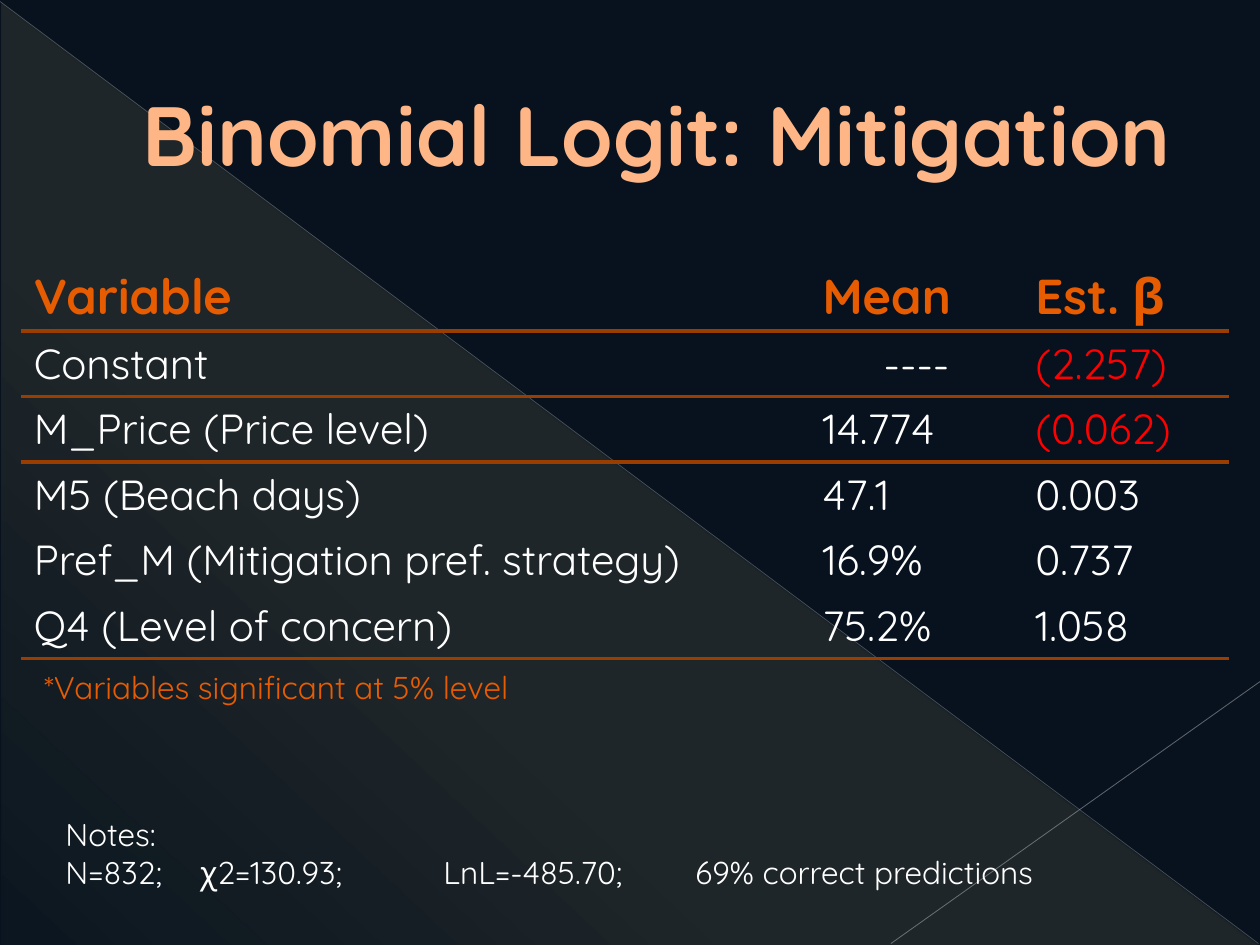
from dataclasses import dataclass
from typing import NamedTuple

from lxml import etree
from pptx import Presentation
from pptx import util as u
from pptx.dml.color import RGBColor
from pptx.enum import shapes, text
from pptx.oxml import parse_xml
from pptx.oxml.ns import nsdecls, qn


@dataclass(frozen=True)
class Theme:
    font: str = "Quicksand"
    back: str = "08121E"
    glow: str = "FFF39D"
    title: str = "FEB687"
    edge: str = "B05D26"
    head: str = "E75C01"
    rule: str = "9A3D01"
    body: str = "FFFFFF"
    neg: str = "FF0000"
    big: float = 48
    mid: float = 28
    cell: float = 24
    note: float = 18
    rule_w: float = 2.25


class Box(NamedTuple):
    x: float
    y: float
    w: float
    h: float

    def emu(self) -> list[int]:
        return [u.Cm(v) for v in self]


class Ray(NamedTuple):
    x1: float
    y1: float
    x2: float
    y2: float
    color: str
    width: float
    alpha: int


class Row(NamedTuple):
    name: str
    mean: str
    beta: str
    ruled: bool = False


T = Theme()
RAYS = [
    Ray(0, 0.03, 25.37, 19.02, "BABDC4", 0.39, 35),
    Ray(25.4, 13.74, 17.96, 19.02, "C1C4CA", 0.47, 45),
]
ROWS = [
    Row("Variable", "Mean", "Est. β", True),
    Row("Constant", "----", "(2.257)", True),
    Row("M_Price (Price level)", "14.774", "(0.062)"),
    Row("M5 (Beach days)", "47.1", "0.003"),
    Row("Pref_M (Mitigation pref. strategy)", "16.9%", "0.737"),
    Row("Q4 (Level of concern)", "75.2%", "1.058", True),
]
COLS = [15.9, 4.29, 4.15]
ROW_H = 1.32


def add_run(para, words: str, size: float, color: str, bold: bool = False):
    run = para.add_run()
    run.text = words
    font = run.font
    font.name, font.size, font.bold = T.font, u.Pt(size), bold
    font.color.rgb = RGBColor.from_string(color)
    return run


def add_box(slide, box: Box, lines: list[str], size: float, color: str,
            bold: bool = False, grow: bool = True):
    frame = slide.shapes.add_textbox(*box.emu()).text_frame
    frame.word_wrap = True
    if grow:
        frame.auto_size = text.MSO_AUTO_SIZE.SHAPE_TO_FIT_TEXT
    for i, line in enumerate(lines):
        para = frame.add_paragraph() if i else frame.paragraphs[0]
        add_run(para, line, size, color, bold)
    return frame


def add_glow(slide, box: Box) -> None:
    tri = slide.shapes.add_shape(shapes.MSO_SHAPE.RIGHT_TRIANGLE, *box.emu())
    tri.shadow.inherit = False
    tri.line.fill.background()
    stops = "".join(
        f'<a:gs pos="{pos * 1000}"><a:srgbClr val="{T.glow}">'
        f'<a:alpha val="{alpha * 1000}"/></a:srgbClr></a:gs>'
        for pos, alpha in [(0, 10), (70, 8), (100, 1)])
    grad = parse_xml(
        f'<a:gradFill {nsdecls("a")}><a:gsLst>{stops}</a:gsLst>'
        f'<a:lin ang="{133 * 60000}" scaled="0"/></a:gradFill>')
    tri._element.spPr.find(qn("a:prstGeom")).addnext(grad)


def add_ray(slide, ray: Ray) -> None:
    ends = [u.Cm(v) for v in ray[:4]]
    line = slide.shapes.add_connector(shapes.MSO_CONNECTOR.STRAIGHT, *ends)
    line.line.width = u.Pt(ray.width)
    line.line.color.rgb = RGBColor.from_string(ray.color)
    props = line._element.spPr
    tint = next(props.iter(qn("a:srgbClr")))
    etree.SubElement(tint, qn("a:alpha")).set("val", str(ray.alpha * 1000))
    etree.SubElement(props, qn("a:effectLst"))


def set_rule(cell, side: str) -> None:
    cell._tc.get_or_add_tcPr().insert(0, parse_xml(
        f'<a:{side} {nsdecls("a")} w="{u.Pt(T.rule_w)}"><a:solidFill>'
        f'<a:srgbClr val="{T.rule}"/></a:solidFill></a:{side}>'))


def add_grid(slide, x: float, y: float) -> None:
    box = Box(x, y, sum(COLS), ROW_H * len(ROWS))
    grid = slide.shapes.add_table(len(ROWS), len(COLS), *box.emu()).table
    grid.first_row = grid.horz_banding = False
    style = grid._tbl.tblPr.find(qn("a:tableStyleId"))
    style.text = "{2D5ABB26-0587-4C30-8999-92F81FD0307C}"
    for col, width in zip(grid.columns, COLS):
        col.width = u.Cm(width)
    for r, row in enumerate(ROWS):
        for c, words in enumerate(row[:3]):
            cell = grid.cell(r, c)
            cell.fill.background()
            para = cell.text_frame.paragraphs[0]
            if words == "----":
                para.alignment = text.PP_ALIGN.CENTER
            if r == 0:
                add_run(para, words, T.mid, T.head, True)
            else:
                color = T.neg if c == 2 and words.startswith("(") else T.body
                add_run(para, words, T.cell, color)
            if row.ruled:
                set_rule(cell, "lnB")
            if r and ROWS[r - 1].ruled:
                set_rule(cell, "lnT")


def main() -> None:
    deck = Presentation()
    deck.slide_width, deck.slide_height = u.Cm(25.4), u.Cm(19.05)
    slide = deck.slides.add_slide(deck.slide_layouts[6])

    # Backdrop
    fill = slide.background.fill
    fill.solid()
    fill.fore_color.rgb = RGBColor.from_string(T.back)
    add_glow(slide, Box(0.03, 0.05, 25.35, 19))
    for ray in RAYS:
        add_ray(slide, ray)

    # Title with outlined letters
    frame = add_box(slide, Box(1.27, 0.74, 22.86, 3.89),
                    ["Binomial Logit: Mitigation"], T.big, T.title, True, False)
    frame.vertical_anchor = text.MSO_ANCHOR.MIDDLE
    para = frame.paragraphs[0]
    para._p.get_or_add_pPr().set("marL", str(u.Cm(1.35)))
    para.runs[0]._r.get_or_add_rPr().insert(0, parse_xml(
        f'<a:ln {nsdecls("a")} w="{u.Pt(1)}"><a:solidFill>'
        f'<a:srgbClr val="{T.edge}"/></a:solidFill></a:ln>'))

    # Estimates
    add_grid(slide, 0.43, 5.23)
    add_box(slide, Box(0.64, 13.34, 17.15, 1.02),
            ["*Variables significant at 5% level"], T.note, T.head)

    # Notes on tab stops
    stats = "N=832;\t χ2=130.93;\tLnL=-485.70;\t69% correct predictions"
    frame = add_box(slide, Box(1.07, 16.31, 23.06, 1.8),
                    ["Notes:", stats], T.note, T.body)
    tabs = etree.SubElement(frame.paragraphs[1]._p.get_or_add_pPr(), qn("a:tabLst"))
    for stop in (2.54, 7.62, 12.7):
        etree.SubElement(tabs, qn("a:tab"), pos=str(u.Cm(stop)), algn="l")

    deck.save("out.pptx")


if __name__ == "__main__":
    main()
